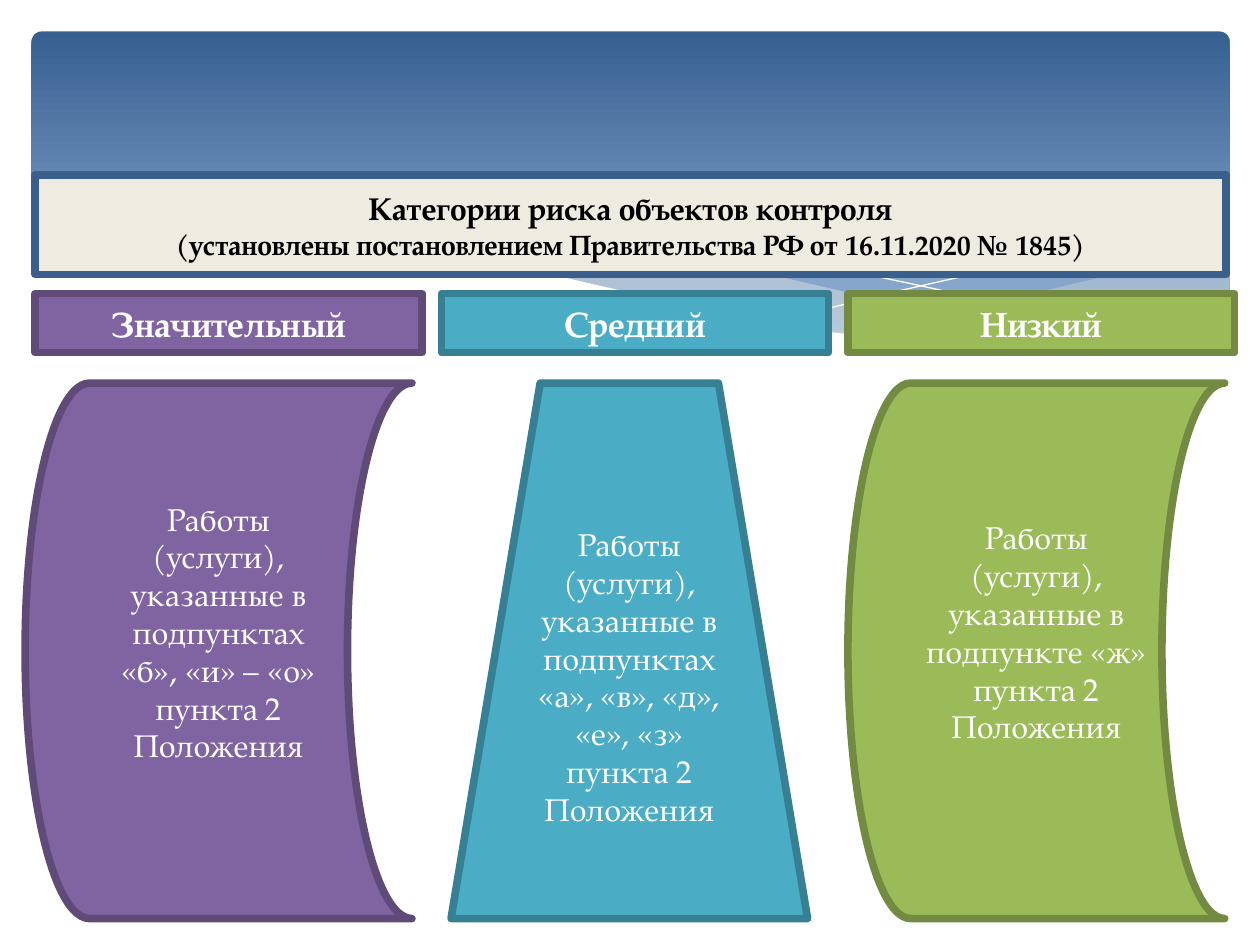
from lxml import etree
from pptx import Presentation
from pptx.dml.color import RGBColor
from pptx.enum.shapes import MSO_SHAPE
from pptx.enum.text import MSO_ANCHOR, MSO_AUTO_SIZE, PP_ALIGN
from pptx.oxml.ns import qn
from pptx.util import Inches, Pt

ROUNDED, RECTANGLE = MSO_SHAPE.ROUNDED_RECTANGLE, MSO_SHAPE.RECTANGLE
TRAPEZOID, STORED_DATA = MSO_SHAPE.TRAPEZOID, MSO_SHAPE.FLOWCHART_STORED_DATA
CENTER, MIDDLE, NO_FIT = PP_ALIGN.CENTER, MSO_ANCHOR.MIDDLE, MSO_AUTO_SIZE.NONE
FONT = "TeX Gyre Pagella"
BORDER = 4.33
COLORS = {
    "white": "FFFFFF", "black": "000000", "cream": "EEECE1",
    "sky_top": "376092", "sky_bottom": "95B3D7", "navy": "3A5F8C",
    "purple": "8064A2", "purple_edge": "5F4A78",
    "teal": "4BACC6", "teal_edge": "377F92",
    "green": "9BBB59", "green_edge": "738A42",
}

TITLE = [
    ("Категории риска объектов контроля", 18),
    ("(установлены постановлением Правительства РФ от 16.11.2020 № 1845)", 16),
]
CATEGORIES = [
    ("Значительный", "purple", STORED_DATA, 0.2, 3.07,
     ["Работы (услуги), указанные в подпунктах «б», «и» – «о»", "пункта 2 Положения"]),
    ("Средний", "teal", TRAPEZOID, 3.58, 2.83,
     ["Работы (услуги), указанные в подпунктах «а», «в», «д», «е», «з» пункта 2 Положения"]),
    ("Низкий", "green", STORED_DATA, 6.73, 2.99,
     ["Работы (услуги), указанные в подпункте «ж» пункта 2 Положения"]),
]
FILLED_WAVES = [
    ("cream", 29, [
        (9.76, 2), (9.35, 2.07), (8.91, 2.16), (8.32, 2.3), (7.79, 2.42), (7.29, 2.53),
        (6.61, 2.65), (7.05, 2.71), (7.57, 2.76), (8.03, 2.78), (8.44, 2.77),
        (8.81, 2.73), (9.13, 2.67), (9.42, 2.59), (9.76, 2.47)]),
    ("cream", 40, [
        (8.93, 2.73), (8.37, 2.65), (7.75, 2.54), (7.06, 2.4), (6.29, 2.22), (5.84, 2.11),
        (5.41, 2.03), (4.89, 1.94), (4.42, 1.89), (3.8, 1.85), (3.28, 1.87), (2.86, 1.91),
        (3.42, 1.99), (4.04, 2.11), (4.49, 2.22), (5.3, 2.4), (6.01, 2.55), (6.65, 2.66),
        (7.22, 2.74), (7.73, 2.77), (8.18, 2.78), (8.57, 2.77)]),
]
LINE_WAVES = [
    [(3.09, 1.95), (3.44, 1.9), (4.01, 1.87), (4.69, 1.89), (5.33, 1.94), (6.08, 2.04),
     (6.65, 2.13), (7.27, 2.26), (7.95, 2.41), (8.69, 2.61), (9.07, 2.72)],
    [(6.13, 2.57), (6.53, 2.46), (6.95, 2.35), (7.48, 2.23), (8.06, 2.1), (8.66, 1.99),
     (9.1, 1.92), (9.51, 1.87), (9.75, 1.85)],
]
BOTTOM_WAVE = [
    (9.77, 2.46), (9.5, 2.56), (9.2, 2.65), (8.87, 2.71), (8.5, 2.75), (8.09, 2.77),
    (7.61, 2.75), (7.08, 2.7), (6.48, 2.62), (5.79, 2.5), (5.03, 2.33), (4.47, 2.2),
    (3.91, 2.07), (3.4, 1.97), (2.92, 1.9), (2.3, 1.85), (1.77, 1.84), (1.32, 1.86),
    (0.85, 1.93), (0.52, 2.01), (0.23, 2.13), (0.23, 3.29), (9.77, 3.29)]


def color(name):
    """Return the named colour."""
    return RGBColor.from_string(COLORS[name])


def paint(shape, fill=None, line=None, width=BORDER):
    """Set the fill and outline of a shape."""
    if fill:
        shape.fill.solid()
        shape.fill.fore_color.rgb = color(fill)
    else:
        shape.fill.background()
    if line:
        shape.line.color.rgb = color(line)
        shape.line.width = Pt(width)
    else:
        shape.line.fill.background()


def write(shape, lines, ink="white", bold=False, bottom=0.05):
    """Write centred (text, size) lines into a shape."""
    frame = shape.text_frame
    frame.auto_size = NO_FIT
    frame.word_wrap = True
    frame.vertical_anchor = MIDDLE
    frame.margin_bottom = Inches(bottom)
    for index, (text, size) in enumerate(lines):
        paragraph = frame.add_paragraph() if index else frame.paragraphs[0]
        paragraph.alignment = CENTER
        paragraph.space_before = Pt(0)
        run = paragraph.add_run()
        run.text = text
        run.font.name = FONT
        run.font.size = Pt(size)
        run.font.bold = bold
        run.font.color.rgb = color(ink)


def add_box(slide, kind, left, top, width, height):
    """Add a preset shape without a shadow."""
    shape = slide.shapes.add_shape(kind, *map(Inches, (left, top, width, height)))
    shape.shadow.inherit = False
    return shape


def add_wave(slide, points, close=True, fill=None, line=None, opacity=100):
    """Add a freeform through points given in inches."""
    start, *rest = [(Inches(x), Inches(y)) for x, y in points]
    builder = slide.shapes.build_freeform(*start, scale=1.0)
    builder.add_line_segments(rest, close=close)
    shape = builder.convert_to_shape()
    shape.shadow.inherit = False
    paint(shape, fill, line, width=0)
    if opacity < 100:
        tint = shape.fill._xPr.find(qn("a:solidFill"))[0]
        etree.SubElement(tint, qn("a:alpha")).set("val", str(opacity * 1000))


def add_backdrop(slide):
    """Add the gradient panel and its waves."""
    panel = add_box(slide, ROUNDED, 0.25, 0.25, 9.51, 2.7)
    panel.adjustments[0] = 0.03
    paint(panel)
    panel.fill.gradient()
    panel.fill.gradient_angle = 270
    stops = zip(panel.fill.gradient_stops, (("sky_top", 0), ("sky_bottom", 0.9)))
    for stop, (name, position) in stops:
        stop.color.rgb = color(name)
        stop.position = position
    for fill, opacity, points in FILLED_WAVES:
        add_wave(slide, points, fill=fill, opacity=opacity)
    for points in LINE_WAVES:
        add_wave(slide, points, close=False, line="white")
    add_wave(slide, BOTTOM_WAVE, fill="white")


def add_title(slide):
    """Format the title placeholder as a banner above the backdrop."""
    title = slide.shapes.title
    title.left, title.top, title.width, title.height = map(Inches, (0.28, 1.39, 9.45, 0.79))
    paint(title, "cream", "navy")
    write(title, TITLE, ink="black", bold=True)
    slide.shapes._spTree.append(title._element)


def add_category(slide, index, category):
    """Add a heading bar and the panel below it."""
    name, tone, kind, left, width, texts = category
    heading = add_box(slide, RECTANGLE, 0.28 + index * 3.225, 2.33, 3.07, 0.47)
    paint(heading, tone, tone + "_edge")
    write(heading, [(name, 20)], bold=True)
    panel = add_box(slide, kind, left, 3.04, width, 4.25)
    paint(panel, tone, tone + "_edge")
    write(panel, [(text, 18) for text in texts], bottom=0.35)


def main():
    """Build and save the risk category slide."""
    presentation = Presentation()
    presentation.slide_width, presentation.slide_height = Inches(10), Inches(7.5)
    slide = presentation.slides.add_slide(presentation.slide_layouts[5])
    add_backdrop(slide)
    add_title(slide)
    for index, category in enumerate(CATEGORIES):
        add_category(slide, index, category)
    presentation.save("out.pptx")


if __name__ == "__main__":
    main()
